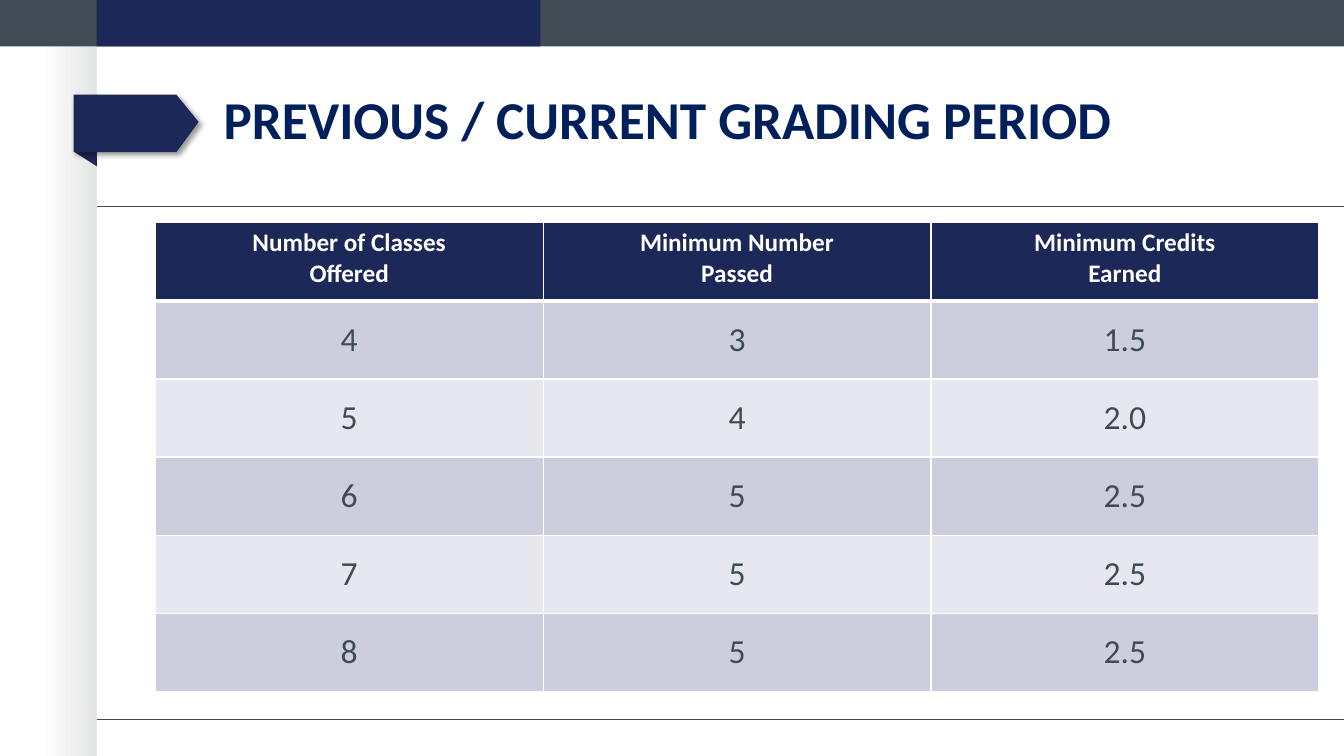
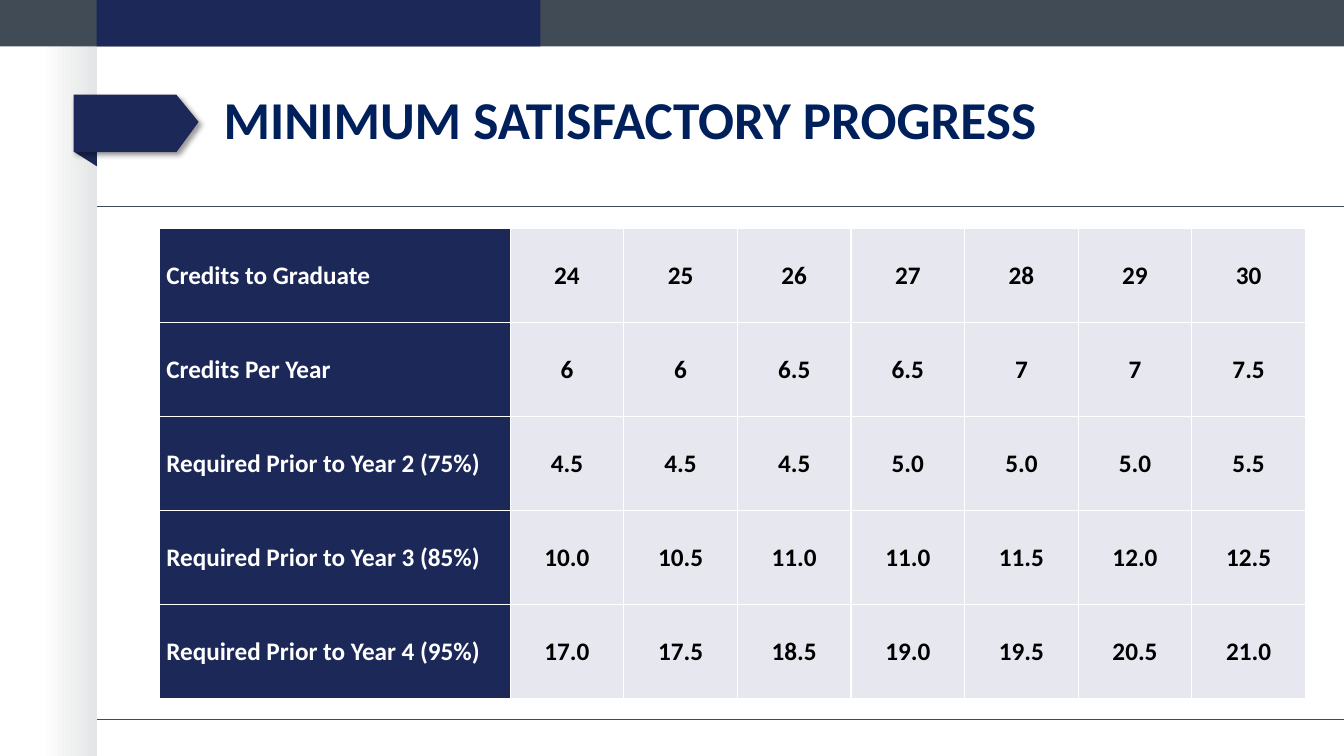
from lxml.etree import SubElement
from pptx import Presentation
from pptx.dml.color import RGBColor
from pptx.enum.shapes import MSO_CONNECTOR, MSO_SHAPE
from pptx.enum.text import MSO_ANCHOR, PP_ALIGN
from pptx.oxml import parse_xml
from pptx.oxml.ns import qn
from pptx.util import Inches, Pt

FONT = "Calibri"
NAVY, SLATE, TITLE_BLUE = "1C2858", "414B56", "00205B"
LAVENDER, PALE, WHITE, BLACK = "CCCEDD", "E7E8EF", "FFFFFF", "000000"
SHADE = "E4E5E6"
DRAWING = "http://schemas.openxmlformats.org/drawingml/2006/main"
ARROW_SHADOW = (
    f'<a:effectLst xmlns:a="{DRAWING}">'
    f'<a:outerShdw blurRad="{Pt(4)}" dist="{Pt(3)}" dir="2700000" algn="tl" rotWithShape="0">'
    f'<a:srgbClr val="{BLACK}"><a:alpha val="40000"/></a:srgbClr>'
    "</a:outerShdw></a:effectLst>"
)

BARS = [(0, 13.33, SLATE), (0.96, 4.4, NAVY)]
RULES = [2.05, 7.14]
FOLD = [(0.74, 1.51), (0.96, 1.51), (0.96, 1.65)]
ARROW = [(0.73, 0.94), (0.73, 1.51), (1.75, 1.51), (1.97, 1.21), (1.75, 0.94)]

PAGES = [
    {
        "title": "PREVIOUS / CURRENT GRADING PERIOD",
        "place": (1.54, 2.21, 11.54, 4.65),
        "first_column": 11.54 / 3,
        "header_row": True,
        "rows": [
            ["Number of Classes\nOffered", "Minimum Number\nPassed", "Minimum Credits\nEarned"],
            ["4", "3", "1.5"],
            ["5", "4", "2.0"],
            ["6", "5", "2.5"],
            ["7", "5", "2.5"],
            ["8", "5", "2.5"],
        ],
    },
    {
        "title": "MINIMUM SATISFACTORY PROGRESS",
        "place": (1.58, 2.27, 11.37, 4.66),
        "first_column": 3.48,
        "header_row": False,
        "rows": [
            ["Credits to Graduate", "24", "25", "26", "27", "28", "29", "30"],
            ["Credits Per Year", "6", "6", "6.5", "6.5", "7", "7", "7.5"],
            ["Required Prior to Year 2 (75%)", "4.5", "4.5", "4.5", "5.0", "5.0", "5.0", "5.5"],
            ["Required Prior to Year 3 (85%)", "10.0", "10.5", "11.0", "11.0", "11.5", "12.0", "12.5"],
            ["Required Prior to Year 4 (95%)", "17.0", "17.5", "18.5", "19.0", "19.5", "20.5", "21.0"],
        ],
    },
]


def paint(fill, color):
    fill.solid()
    fill.fore_color.rgb = RGBColor.from_string(color)


def style_text(frame, size, color, bold, align):
    for para in frame.paragraphs:
        para.alignment = align
        for span in para.runs:
            span.font.name = FONT
            span.font.size = Pt(size)
            span.font.bold = bold
            paint(span.font.fill, color)


deck = Presentation()
deck.slide_width, deck.slide_height = Inches(13.33), Inches(7.5)

for content in PAGES:
    page = deck.slides.add_slide(deck.slide_layouts[6])
    shapes = page.shapes

    side_shade = shapes.add_shape(
        MSO_SHAPE.RECTANGLE, Inches(0.4), Inches(0.45), Inches(0.56), Inches(7.05)
    )
    side_shade.shadow.inherit = False
    side_shade.line.fill.background()
    side_shade.fill.gradient()
    side_shade.fill.gradient_angle = 0
    for stop, color in zip(side_shade.fill.gradient_stops, (WHITE, SHADE)):
        stop.color.rgb = RGBColor.from_string(color)

    for left, width, color in BARS:
        bar = shapes.add_shape(MSO_SHAPE.RECTANGLE, Inches(left), 0, Inches(width), Inches(0.46))
        bar.shadow.inherit = False
        bar.line.fill.background()
        paint(bar.fill, color)

    for top in RULES:
        rule = shapes.add_connector(
            MSO_CONNECTOR.STRAIGHT, Inches(0.96), Inches(top), Inches(13.33), Inches(top)
        )
        rule.line.width = Pt(1)
        paint(rule.line.fill, SLATE)
        SubElement(rule._element.spPr, qn("a:effectLst"))

    for outline in (FOLD, ARROW):
        points = [(Inches(x), Inches(y)) for x, y in outline]
        builder = shapes.build_freeform(*points[0])
        builder.add_line_segments(points[1:], close=True)
        ribbon = builder.convert_to_shape()
        ribbon.line.fill.background()
        paint(ribbon.fill, NAVY)
        if outline is ARROW:
            ribbon._element.spPr.append(parse_xml(ARROW_SHADOW))
        else:
            ribbon.shadow.inherit = False

    title = shapes.add_textbox(Inches(2.12), Inches(0.57), Inches(10.97), Inches(1.32)).text_frame
    title.word_wrap = True
    title.vertical_anchor = MSO_ANCHOR.MIDDLE
    title.text = content["title"]
    title.paragraphs[0].line_spacing = Pt(38)
    style_text(title, 38, TITLE_BLUE, True, PP_ALIGN.LEFT)

    rows, header_row = content["rows"], content["header_row"]
    left, top, width, height = content["place"]
    column_count = len(rows[0])
    table = shapes.add_table(
        len(rows), column_count, Inches(left), Inches(top), Inches(width), Inches(height)
    ).table
    table.first_row = header_row
    table.first_col = not header_row
    table.horz_banding = False
    first_width = content["first_column"]
    for index, column in enumerate(table.columns):
        other_width = (width - first_width) / (column_count - 1)
        column.width = Inches(other_width if index else first_width)

    for row_index, values in enumerate(rows):
        for column_index, value in enumerate(values):
            cell = table.cell(row_index, column_index)
            cell.text_frame.text = value
            cell.vertical_anchor = MSO_ANCHOR.MIDDLE
            align = PP_ALIGN.CENTER
            if header_row and row_index == 0:
                fill, size, color, bold = NAVY, 18, WHITE, True
                cell.vertical_anchor = MSO_ANCHOR.TOP
            elif header_row:
                fill, size, color, bold = (PALE, LAVENDER)[row_index % 2], 24, SLATE, False
            else:
                fill, size, color, bold = PALE, 18, BLACK, True
                cell.margin_left = cell.margin_right = Inches(0.07)
                cell.margin_top = cell.margin_bottom = 0
                if column_index == 0:
                    fill, color, align = NAVY, WHITE, PP_ALIGN.LEFT
            style_text(cell.text_frame, size, color, bold, align)

            for edge in ("lnL", "lnR", "lnT", "lnB"):
                heavy = header_row and (edge, row_index) in (("lnB", 0), ("lnT", 1))
                border = SubElement(
                    cell._tc.get_or_add_tcPr(), qn(f"a:{edge}"), w=str(Pt(3 if heavy else 1))
                )
                SubElement(SubElement(border, qn("a:solidFill")), qn("a:srgbClr"), val=WHITE)
            paint(cell.fill, fill)

deck.save("out.pptx")
